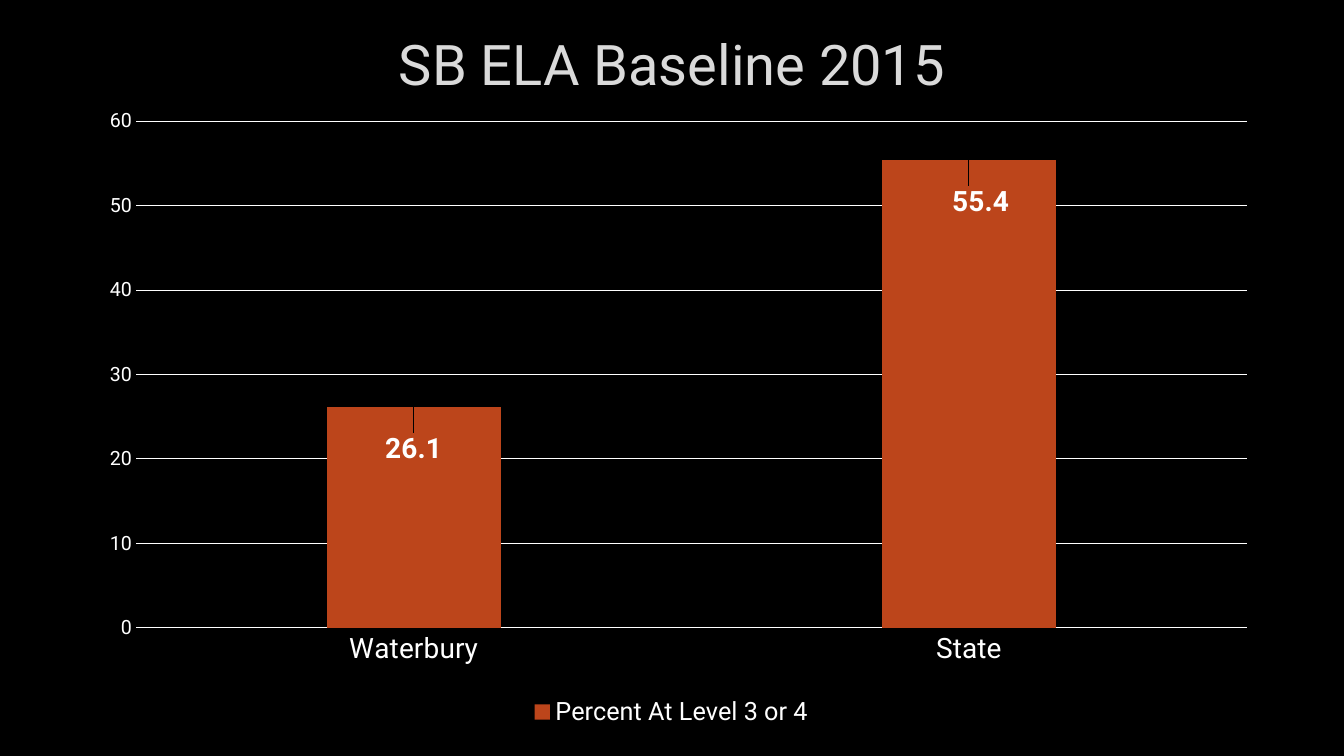
import pptx
import pptx.util
import pptx.chart.data
import pptx.dml.color
import pptx.enum.chart
import pptx.enum.text
import pptx.oxml

BLACK = pptx.dml.color.RGBColor(0x00, 0x00, 0x00)
WHITE = pptx.dml.color.RGBColor(0xFF, 0xFF, 0xFF)
SILVER = pptx.dml.color.RGBColor(0xDA, 0xDA, 0xDA)
RUST = pptx.dml.color.RGBColor(0xBC, 0x45, 0x1B)
FONT = "Roboto"
WIDTH = pptx.util.Inches(13.33)
HEIGHT = pptx.util.Inches(7.5)

SERIES_NAME = "Percent At Level 3 or 4"
SCORES = {"Waterbury": 26.1, "State": 55.4}
# Label shifts from the bar top, as shares of the chart's size
LABEL_SHIFTS = [(0, 0.1), (0.01, 0.1)]


def area(left, top, width, height):
    """Turn shares of the slide's size into lengths."""
    return (int(left * WIDTH), int(top * HEIGHT),
            int(width * WIDTH), int(height * HEIGHT))


def style_font(font, size, color=WHITE, bold=False):
    font.name = FONT
    font.size = pptx.util.Pt(size)
    font.bold = bold
    font.color.rgb = color


def style_line(line):
    line.color.rgb = WHITE
    line.width = pptx.util.Pt(0.75)


def manual_layout(x, y, size=None):
    """Build a chart layout: a shift, or an inner plot area if size is given."""
    tags = []
    if size:
        tags += [("layoutTarget", "inner"), ("xMode", "edge"), ("yMode", "edge")]
    tags += [("x", x), ("y", y)]
    if size:
        tags += [("w", size[0]), ("h", size[1])]
    body = "".join(f'<c:{tag} val="{value}"/>' for tag, value in tags)
    return pptx.oxml.parse_xml(
        '<c:layout xmlns:c="http://schemas.openxmlformats.org/drawingml/2006/chart">'
        f"<c:manualLayout>{body}</c:manualLayout></c:layout>")


def add_title(page, text):
    box = page.shapes.add_textbox(*area(0.075, 0.013, 0.85, 0.141))
    frame = box.text_frame
    frame.word_wrap = True
    frame.vertical_anchor = pptx.enum.text.MSO_ANCHOR.MIDDLE
    frame.text = text
    para = frame.paragraphs[0]
    para.alignment = pptx.enum.text.PP_ALIGN.CENTER
    style_font(para.runs[0].font, 40, SILVER)


def style_axes(chart):
    none = pptx.enum.chart.XL_TICK_MARK.NONE
    for axis, size in ((chart.category_axis, 20), (chart.value_axis, 14)):
        axis.major_tick_mark = none
        axis.minor_tick_mark = none
        style_font(axis.tick_labels.font, size)
    style_line(chart.category_axis.format.line)
    scale = chart.value_axis
    scale.minimum_scale, scale.maximum_scale, scale.major_unit = 0, 60, 10
    scale.format.line.fill.background()
    style_line(scale.major_gridlines.format.line)


def style_labels(series):
    outside = pptx.enum.chart.XL_LABEL_POSITION.OUTSIDE_END
    for index in range(len(LABEL_SHIFTS)):
        label = series.points[index].data_label
        style_font(label.font, 20, bold=True)
        label.position = outside
    indexes = series._element.xpath("c:dLbls/c:dLbl/c:idx")
    for index, shift in zip(indexes, LABEL_SHIFTS):
        index.addnext(manual_layout(*shift))


def add_score_chart(page):
    data = pptx.chart.data.CategoryChartData()
    data.categories = list(SCORES)
    data.add_series(SERIES_NAME, list(SCORES.values()))
    chart = page.shapes.add_chart(
        pptx.enum.chart.XL_CHART_TYPE.COLUMN_CLUSTERED,
        *area(0.06, 0.136, 0.879, 0.832), data).chart
    chart.has_title = False
    style_font(chart.font, 10)
    style_axes(chart)

    # Bars
    plot = chart.plots[0]
    plot.vary_by_categories = False
    plot.gap_width, plot.overlap = 219, -27
    series = plot.series[0]
    series.format.fill.solid()
    series.format.fill.fore_color.rgb = RUST
    style_labels(series)

    # Legend
    chart.has_legend = True
    chart.legend.position = pptx.enum.chart.XL_LEGEND_POSITION.BOTTOM
    chart.legend.include_in_layout = False
    style_font(chart.legend.font, 18)

    # Plot area
    plot_area = chart._chartSpace.xpath("c:chart/c:plotArea")[0]
    for layout in plot_area.xpath("c:layout"):
        plot_area.remove(layout)
    plot_area.insert(0, manual_layout(0.047, 0.029, (0.94, 0.806)))


def main():
    deck = pptx.Presentation()
    deck.slide_width, deck.slide_height = WIDTH, HEIGHT
    page = deck.slides.add_slide(deck.slide_layouts[6])
    page.background.fill.solid()
    page.background.fill.fore_color.rgb = BLACK
    add_title(page, "SB ELA Baseline 2015")
    add_score_chart(page)
    deck.save("out.pptx")


if __name__ == "__main__":
    main()
